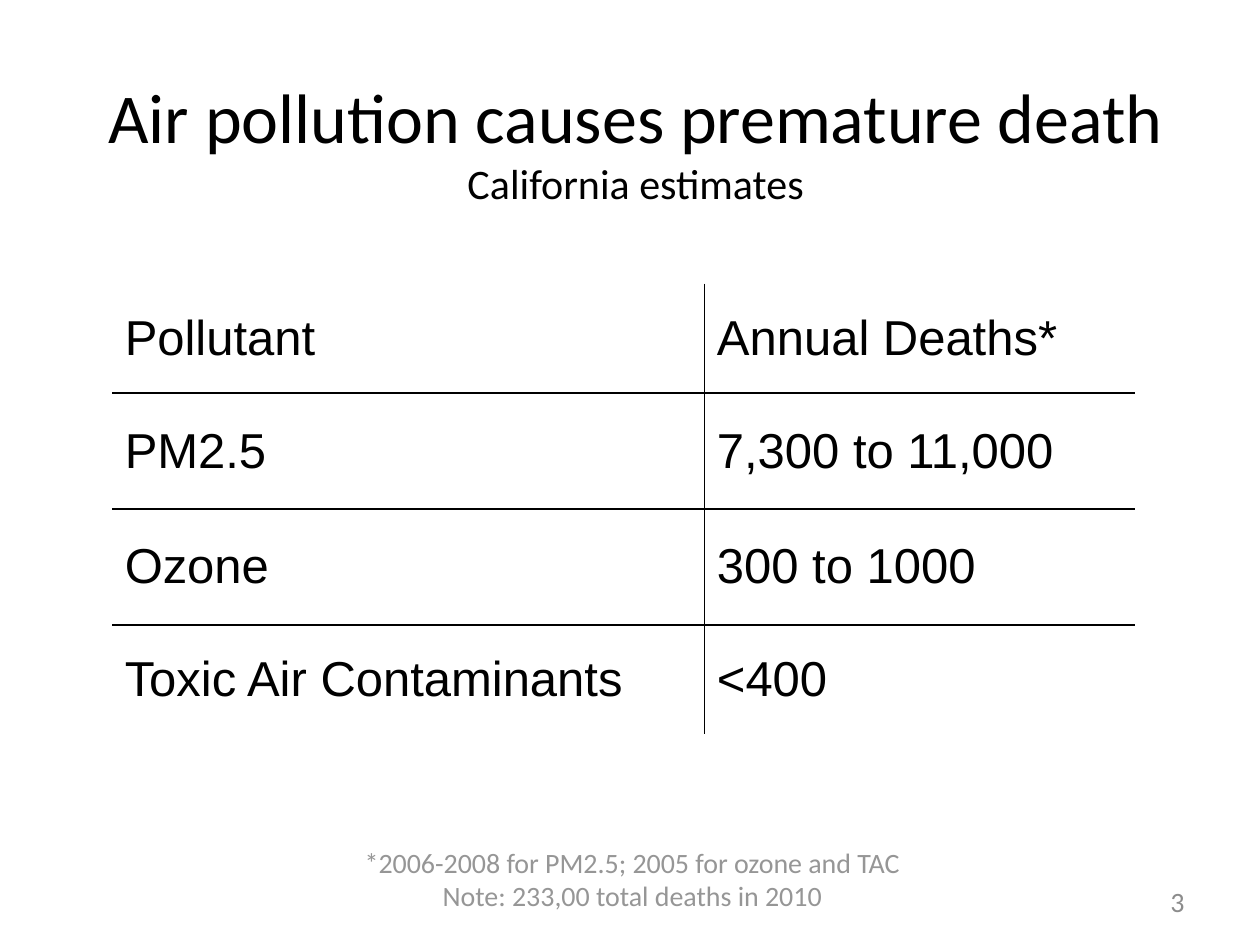
from dataclasses import dataclass

from lxml.etree import SubElement
from pptx import Presentation
from pptx.dml.color import RGBColor as RGB
from pptx.enum.text import MSO_ANCHOR as Anchor, MSO_AUTO_SIZE as AutoSize, PP_ALIGN as Align
from pptx.oxml.ns import qn
from pptx.util import Emu, Inches, Pt


@dataclass(frozen=True)
class Theme:
    heading_font: str = "Calibri"
    table_font: str = "Arial"
    ink: str = "000000"
    note_ink: str = "969696"
    number_ink: str = "8C8C8C"
    title_size: int = 40
    subtitle_size: int = 24
    table_size: int = 28
    note_size: int = 16
    rule_width: int = 1


THEME = Theme()
WIDTH, HEIGHT = Inches(10), Inches(7.5)

ESTIMATES = [
    ("Pollutant", "Annual Deaths*"),
    ("PM2.5", "7,300 to 11,000"),
    ("Ozone", "300 to 1000"),
    ("Toxic Air Contaminants", "<400"),
]
COLUMN_WIDTHS = (4.7, 3.42)
ROW_HEIGHTS = (0.87, 0.92, 0.92, 0.87)
FOOTNOTES = ("*2006-2008 for PM2.5; 2005 for ozone and TAC",
             "Note: 233,00 total deaths in 2010")


def area(left, top, width, height):
    """Turn shares of the slide's size into a position and a size."""
    return (Emu(int(left * WIDTH)), Emu(int(top * HEIGHT)),
            Emu(int(width * WIDTH)), Emu(int(height * HEIGHT)))


def style(font, name, size, color):
    font.name, font.size = name, Pt(size)
    font.color.rgb = RGB.from_string(color)


def add_title(slide, heading, subtitle):
    title = slide.shapes.title
    title.left, title.top, title.width, title.height = area(0.042, 0.065, 0.925, 0.168)
    frame = title.text_frame
    frame.auto_size = AutoSize.NONE
    frame.vertical_anchor = Anchor.MIDDLE
    line = frame.paragraphs[0]
    line.alignment = Align.CENTER
    style(line.font, THEME.heading_font, THEME.title_size, THEME.ink)
    line.add_run().text = heading
    line.add_line_break()
    subtitle_run = line.add_run()
    subtitle_run.text = subtitle
    subtitle_run.font.size = Pt(THEME.subtitle_size)


def rule_cell(cell, ruled_sides):
    """Draw the given sides of a cell and clear the others."""
    properties = cell._tc.get_or_add_tcPr()
    for side in "LRTB":
        border = SubElement(properties, qn(f"a:ln{side}"), w=str(Pt(THEME.rule_width)))
        if side in ruled_sides:
            ink = SubElement(border, qn("a:solidFill"))
            SubElement(ink, qn("a:srgbClr"), val=THEME.ink)
        else:
            SubElement(border, qn("a:noFill"))


def add_estimates(slide, rows):
    last_row, last_column = len(rows) - 1, len(rows[0]) - 1
    table = slide.shapes.add_table(len(rows), len(rows[0]),
                                   *area(0.089, 0.3, 0.812, 0.477)).table
    table.first_row = table.horz_banding = False
    for column, width in zip(table.columns, COLUMN_WIDTHS):
        column.width = Inches(width)
    for row, height in zip(table.rows, ROW_HEIGHTS):
        row.height = Inches(height)

    for r, values in enumerate(rows):
        for c, value in enumerate(values):
            cell = table.cell(r, c)
            cell.text = value
            cell.vertical_anchor = Anchor.MIDDLE
            style(cell.text_frame.paragraphs[0].font,
                  THEME.table_font, THEME.table_size, THEME.ink)
            # Only the inner grid lines show
            inner = {"L": c > 0, "R": c < last_column, "T": r > 0, "B": r < last_row}
            rule_cell(cell, [side for side, shown in inner.items() if shown])
            cell.fill.background()


def add_note(slide, box, lines, color, align, anchor, margins=(0.1, 0.05)):
    frame = slide.shapes.add_textbox(*box).text_frame
    frame.word_wrap = True
    frame.vertical_anchor = anchor
    frame.margin_left = frame.margin_right = Inches(margins[0])
    frame.margin_top = frame.margin_bottom = Inches(margins[1])
    frame.text = "\n".join(lines)
    for line in frame.paragraphs:
        line.alignment = align
        style(line.font, THEME.heading_font, THEME.note_size, color)


def main():
    deck = Presentation()
    deck.slide_width, deck.slide_height = WIDTH, HEIGHT
    slide = deck.slides.add_slide(deck.slide_layouts.get_by_name("Title Only"))

    add_title(slide, "Air pollution causes premature death", "California estimates")
    add_estimates(slide, ESTIMATES)
    # Footnotes and page number
    add_note(slide, area(0.125, 0.889, 0.754, 0.081), FOOTNOTES, THEME.note_ink,
             Align.CENTER, Anchor.TOP, margins=(0.07, 0.04))
    add_note(slide, area(0.717, 0.927, 0.233, 0.053), ["3"], THEME.number_ink,
             Align.RIGHT, Anchor.MIDDLE)

    deck.save("out.pptx")


if __name__ == "__main__":
    main()
